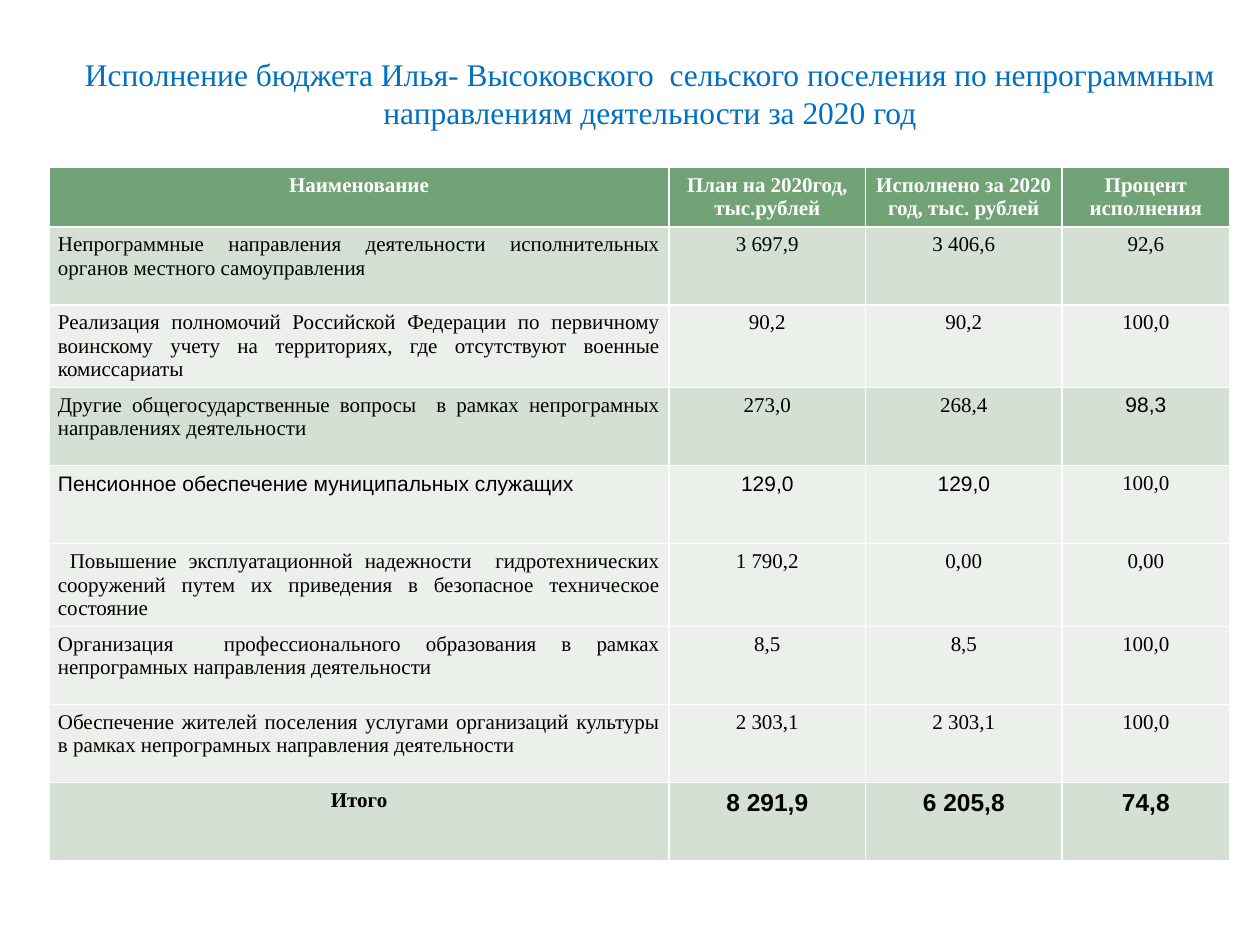
from pptx import Presentation
from pptx.dml.color import RGBColor
from pptx.enum.text import MSO_ANCHOR, PP_ALIGN
from pptx.util import Inches, Pt

CENTER, JUSTIFY = PP_ALIGN.CENTER, PP_ALIGN.JUSTIFY
MIDDLE = MSO_ANCHOR.MIDDLE

BLUE = RGBColor(0x00, 0x70, 0xC0)
GREEN = RGBColor(0x72, 0xA3, 0x76)
SAGE = RGBColor(0xD5, 0xE0, 0xD5)
PALE = RGBColor(0xEB, 0xF0, 0xEB)
WHITE = RGBColor(0xFF, 0xFF, 0xFF)
BLACK = RGBColor(0x00, 0x00, 0x00)
SERIF, SANS = "Times New Roman", "Arial"

TITLE = ("Исполнение бюджета Илья- Высоковского  сельского поселения "
         "по непрограммным направлениям деятельности за 2020 год")
ROWS = [
    ("Наименование", "План на 2020год,\nтыс.рублей",
     "Исполнено за 2020 год, тыс. рублей", "Процент исполнения"),
    ("Непрограммные направления деятельности исполнительных органов "
     "местного самоуправления", "3 697,9", "3 406,6", "92,6"),
    ("Реализация полномочий Российской Федерации по первичному воинскому "
     "учету на территориях, где отсутствуют военные комиссариаты",
     "90,2", "90,2", "100,0"),
    ("Другие общегосударственные вопросы  в рамках непрограмных "
     "направлениях деятельности", "273,0", "268,4", "98,3"),
    ("Пенсионное обеспечение муниципальных служащих",
     "129,0", "129,0", "100,0"),
    (" Повышение эксплуатационной надежности  гидротехнических сооружений "
     "путем их приведения в безопасное техническое состояние",
     "1 790,2", "0,00", "0,00"),
    ("Организация  профессионального образования в рамках непрограмных "
     "направления деятельности", "8,5", "8,5", "100,0"),
    ("Обеспечение жителей поселения услугами организаций культуры в рамках "
     "непрограмных направления деятельности", "2 303,1", "2 303,1", "100,0"),
    ("Итого", "8 291,9", "6 205,8", "74,8"),
]
LAST = len(ROWS) - 1
FILLS = [GREEN, SAGE, PALE, SAGE, PALE, PALE, PALE, PALE, SAGE]
SHARES = [4.92, 1.56, 1.56, 1.33]
HEAD, BODY = 0.4, 0.62
SANS_CELLS = {(3, 3), (4, 0), (4, 1), (4, 2),
              (LAST, 1), (LAST, 2), (LAST, 3)}


def style(frame, align, face, size, color, bold=False):
    for par in frame.paragraphs:
        par.alignment = align
        font = par.font
        font.name, font.size, font.bold = face, Pt(size), bold
        font.color.rgb = color


def add_title(slide, left, top, width, height):
    title = slide.shapes.title
    title.left, title.top = Inches(left), Inches(top)
    title.width, title.height = Inches(width), Inches(height)
    frame = title.text_frame
    frame.text = TITLE
    frame.word_wrap = True
    frame.vertical_anchor = MIDDLE
    style(frame, CENTER, SERIF, 18, BLUE)


def fill_cell(cell, row, col):
    """Write one cell; the header and total rows are bold and centred."""
    cell.text = ROWS[row][col]
    cell.margin_left = cell.margin_right = Inches(0.07)
    cell.fill.solid()
    cell.fill.fore_color.rgb = FILLS[row]
    edge = row in (0, LAST)
    style(cell.text_frame,
          CENTER if col or edge else JUSTIFY,
          SANS if (row, col) in SANS_CELLS else SERIF,
          14 if row == LAST and col else 12,
          BLACK if row else WHITE,
          edge)


def add_budget(slide, left, top, width):
    height = HEAD + BODY * LAST
    table = slide.shapes.add_table(
        len(ROWS), len(SHARES), Inches(left), Inches(top),
        Inches(width), Inches(height)).table
    for col, share in zip(table.columns, SHARES):
        col.width = Inches(width * share / sum(SHARES))
    for row, line in enumerate(table.rows):
        line.height = Inches(BODY if row else HEAD)
        for col, cell in enumerate(line.cells):
            fill_cell(cell, row, col)


def main():
    deck = Presentation()
    deck.slide_width, deck.slide_height = Inches(10), Inches(7.5)
    slide = deck.slides.add_slide(deck.slide_layouts[5])
    add_title(slide, 0.55, 0.39, 9.22, 0.7)
    add_budget(slide, 0.39, 1.33, 9.37)
    deck.save("out.pptx")


if __name__ == "__main__":
    main()
